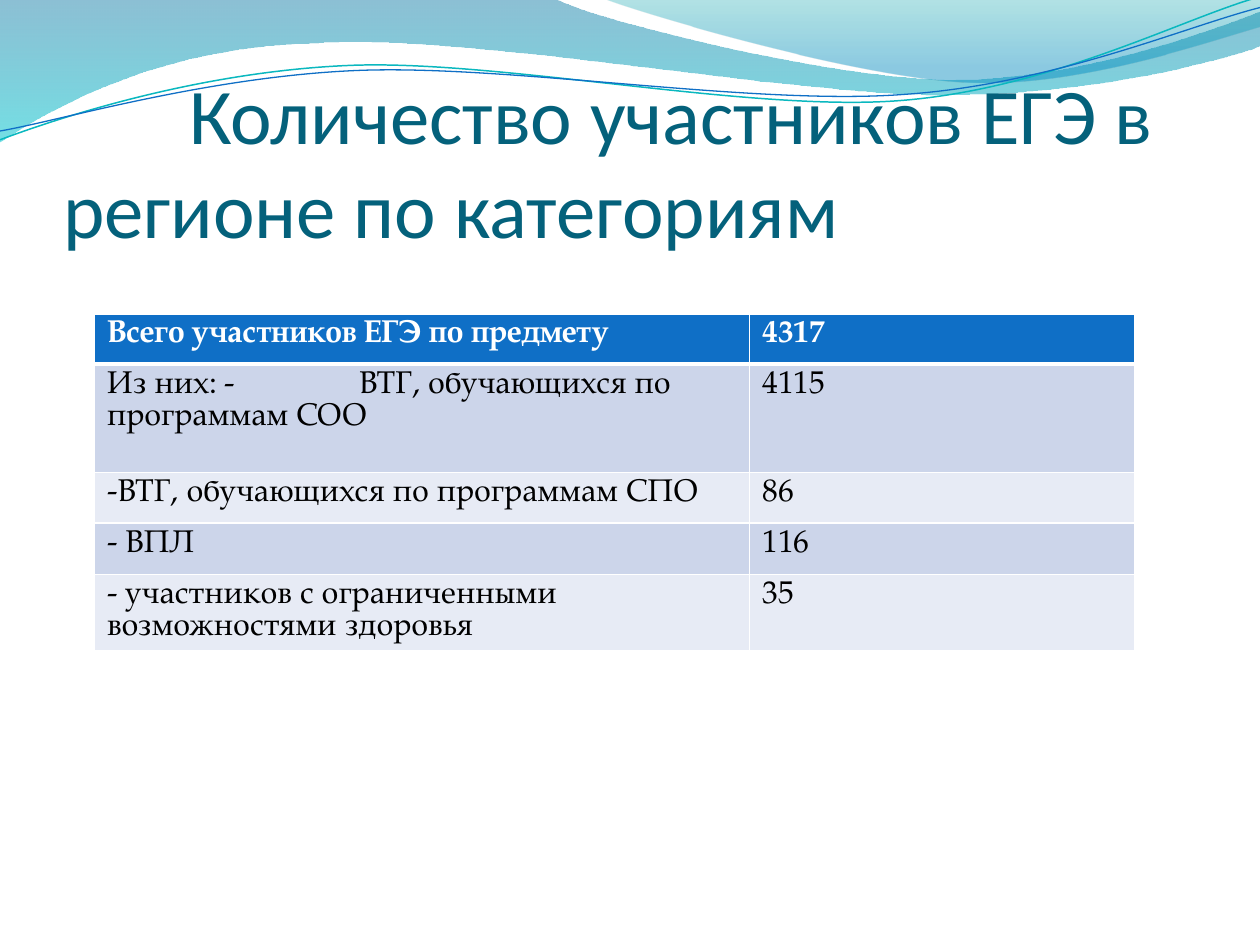
from lxml.etree import SubElement
from pptx import Presentation
from pptx.dml.color import RGBColor
from pptx.enum.text import MSO_ANCHOR, MSO_AUTO_SIZE, PP_ALIGN
from pptx.oxml.ns import qn
from pptx.util import Inches, Pt

WHITE = RGBColor(0xFF, 0xFF, 0xFF)
BLACK = RGBColor(0x00, 0x00, 0x00)
TITLE_TEAL = RGBColor(0x04, 0x61, 0x7B)
BLUE = RGBColor(0x0F, 0x6F, 0xC6)
TEAL = RGBColor(0x0A, 0xB8, 0xBF)
BAND_DARK = RGBColor(0xCC, 0xD5, 0xEA)
BAND_LIGHT = RGBColor(0xE7, 0xEB, 0xF5)
WAVE_BLUE = RGBColor(0x00, 0x74, 0xA1)
WAVE_CYAN = RGBColor(0x00, 0xC6, 0xCF)
CREST_TEAL = RGBColor(0x00, 0xA1, 0xA9)
CREST_BLUE = RGBColor(0x00, 0x8B, 0xBF)

# An outline is a list of steps: one point is a straight line, three are a Bézier curve.
# Gradient stops are (position %, colour, opacity %).
WAVES = [
    ([[(0, 0)], [(4.4, -0.01)],
      [(4.76, 0.17), (6.64, 0.63), (7.58, 0.63)],
      [(8.53, 0.63), (9.58, 0.26), (10, 0.09)],
      [(10.01, 0.36)],
      [(9.83, 0.44), (8.7, 0.76), (7.46, 0.75)],
      [(6.22, 0.75), (3.82, 0.28), (2.57, 0.34)],
      [(1.29, 0.36), (0.46, 0.83), (-0.01, 1.13)]],
     [(0, WAVE_BLUE, 45), (100, WAVE_CYAN, 55)]),
    ([[(4.79, -0.01)],
      [(5.09, 0.11), (6.82, 0.62), (7.69, 0.65)],
      [(8.56, 0.69), (9.61, 0.32), (10, 0.21)],
      [(10, 0)]],
     [(0, CREST_TEAL, 30), (80, CREST_BLUE, 45)]),
]
WAVE_LINES = [
    ([[(0, 1.11)],
      [(0.48, 0.93), (1.58, 0.57), (2.77, 0.52)],
      [(3.95, 0.47), (5.93, 0.89), (7.13, 0.8)],
      [(8.33, 0.71), (9.38, 0.15), (9.98, -0.02)]], TEAL, 0.85),
    ([[(0, 1.04)],
      [(0.47, 0.96), (1.64, 0.61), (2.83, 0.56)],
      [(4.03, 0.51), (5.97, 0.84), (7.17, 0.75)],
      [(8.36, 0.67), (9.41, 0.21), (10, 0.06)]], BLUE, 0.75),
]

ROWS = [
    ("Всего участников ЕГЭ по предмету", "4317"),
    ("Из них: -\tВТГ, обучающихся по программам СОО", "4115"),
    ("-ВТГ, обучающихся по программам СПО", "86"),
    ("- ВПЛ", "116"),
    ("- участников с ограниченными возможностями здоровья", "35"),
]
COLUMN_WIDTHS = [5.2, 3.06]
ROW_HEIGHTS = [0.4, 0.86, 0.4, 0.41, 0.6]


def add_outline(slide, steps, close):
    """Build the outline through its end points, then bend the curved steps."""
    ends = [(Inches(x), Inches(y)) for x, y in (step[-1] for step in steps)]
    builder = slide.shapes.build_freeform(*ends[0])
    builder.add_line_segments(ends[1:], close=close)
    shape = builder.convert_to_shape()
    shape.shadow.inherit = False
    segments = list(shape.element.iter(qn("a:lnTo")))
    for segment, step in zip(segments, steps[1:]):
        if len(step) == 3:
            curve = segment.makeelement(qn("a:cubicBezTo"))
            for x, y in step:
                SubElement(curve, qn("a:pt"), x=str(Inches(x) - shape.left),
                           y=str(Inches(y) - shape.top))
            segment.getparent().replace(segment, curve)
    return shape


def set_gradient(shape, stops):
    """Fill from top to bottom with stops that carry their own opacity."""
    shape.fill.gradient()
    gradient = shape.element.spPr.find(qn("a:gradFill"))
    for child in list(gradient):
        gradient.remove(child)
    stop_list = SubElement(gradient, qn("a:gsLst"))
    for position, color, opacity in stops:
        stop = SubElement(stop_list, qn("a:gs"), pos=str(position * 1000))
        rgb = SubElement(stop, qn("a:srgbClr"), val=str(color))
        SubElement(rgb, qn("a:alpha"), val=str(opacity * 1000))
    SubElement(gradient, qn("a:lin"), ang="5400000", scaled="0")


def add_wave(slide, steps, stops):
    shape = add_outline(slide, steps, close=True)
    set_gradient(shape, stops)
    shape.line.fill.background()


def add_wave_line(slide, steps, color, width):
    shape = add_outline(slide, steps, close=False)
    shape.fill.background()
    shape.line.color.rgb = color
    shape.line.width = Pt(width)


def set_tab_step(paragraph, step):
    paragraph._p.get_or_add_pPr().set("defTabSz", str(step))


def format_title(slide, text):
    title = slide.shapes.title
    title.element.getparent().append(title.element)  # in front of the waves
    title.left, title.top = Inches(0.5), Inches(0.77)
    title.width, title.height = Inches(9), Inches(1.25)
    frame = title.text_frame
    frame.text = text
    frame.word_wrap = True
    frame.auto_size = MSO_AUTO_SIZE.NONE
    frame.vertical_anchor = MSO_ANCHOR.BOTTOM
    frame.margin_left = frame.margin_right = frame.margin_bottom = 0
    frame.margin_top = Inches(0.05)
    paragraph = frame.paragraphs[0]
    paragraph.alignment = PP_ALIGN.LEFT
    set_tab_step(paragraph, Inches(1))
    paragraph.font.name = "Calibri"
    paragraph.font.size = Pt(45)
    paragraph.font.color.rgb = TITLE_TEAL


def set_borders(cell, top, bottom):
    """Draw white borders, 1 point at the sides; they must precede the cell's fill."""
    properties = cell._tc.get_or_add_tcPr()
    widths = {"a:lnL": 1, "a:lnR": 1, "a:lnT": top, "a:lnB": bottom}
    for index, (tag, width) in enumerate(widths.items()):
        border = properties.makeelement(qn(tag), {"w": str(Pt(width))})
        fill = SubElement(border, qn("a:solidFill"))
        SubElement(fill, qn("a:srgbClr"), val=str(WHITE))
        properties.insert(index, border)


def fill_cell(cell, text, is_header, background):
    cell.text = text
    cell.fill.solid()
    cell.fill.fore_color.rgb = background
    paragraph = cell.text_frame.paragraphs[0]
    set_tab_step(paragraph, Inches(1))
    font = paragraph.font
    font.name = "TeX Gyre Pagella"
    font.size = Pt(18)
    font.bold = is_header
    font.color.rgb = WHITE if is_header else BLACK


def add_participants_table(slide):
    table = slide.shapes.add_table(
        len(ROWS), len(COLUMN_WIDTHS), Inches(0.75), Inches(2.49),
        Inches(sum(COLUMN_WIDTHS)), Inches(sum(ROW_HEIGHTS))).table
    for column, width in zip(table.columns, COLUMN_WIDTHS):
        column.width = Inches(width)
    for index, (row, height, texts) in enumerate(zip(table.rows, ROW_HEIGHTS, ROWS)):
        row.height = Inches(height)
        band = BAND_DARK if index % 2 else BAND_LIGHT
        for cell, text in zip(row.cells, texts):
            fill_cell(cell, text, index == 0, BLUE if index == 0 else band)
            set_borders(cell, top=3 if index == 1 else 1, bottom=3 if index == 0 else 1)


def main():
    presentation = Presentation()
    presentation.slide_width, presentation.slide_height = Inches(10), Inches(7.5)
    slide = presentation.slides.add_slide(presentation.slide_layouts[5])
    for steps, stops in WAVES:
        add_wave(slide, steps, stops)
    for steps, color, width in WAVE_LINES:
        add_wave_line(slide, steps, color, width)
    format_title(slide, "\tКоличество участников ЕГЭ в регионе по категориям")
    add_participants_table(slide)
    presentation.save("out.pptx")


if __name__ == "__main__":
    main()
